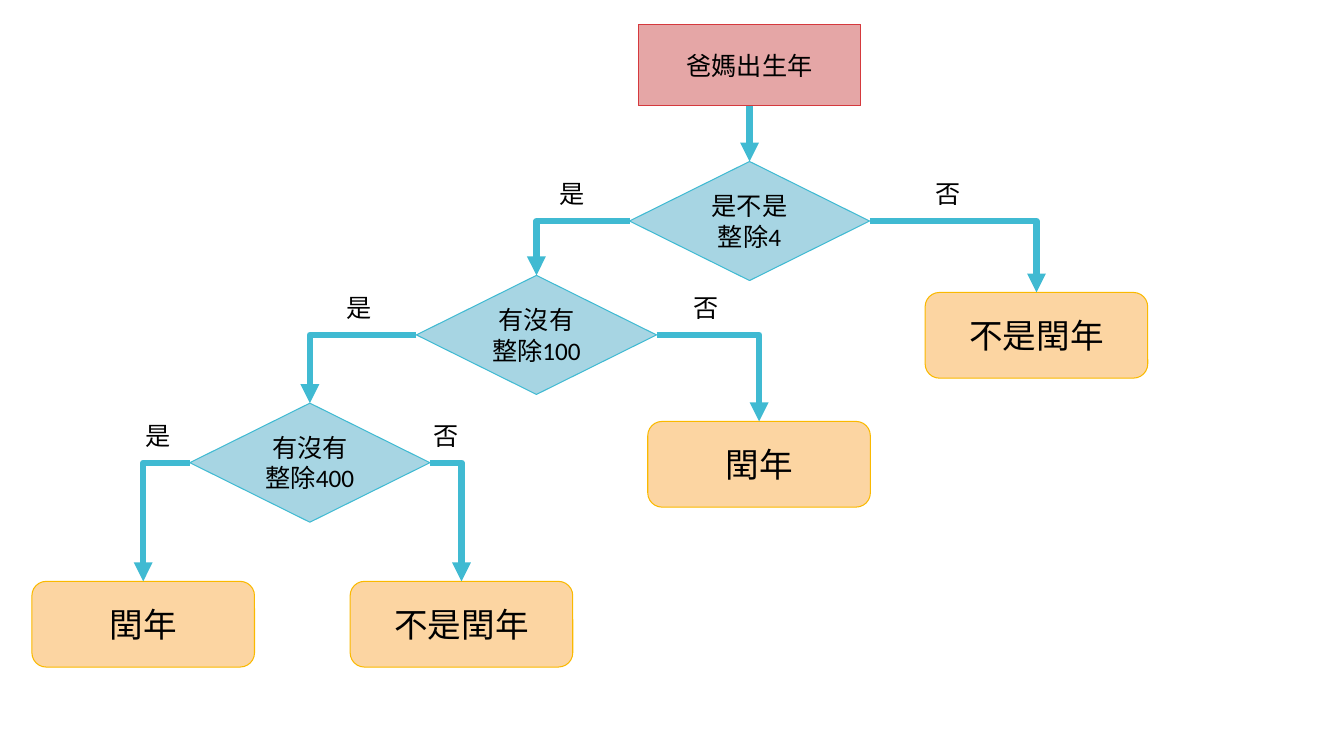
from lxml import etree
from pptx import Presentation
from pptx import util as u
from pptx.dml.color import RGBColor
from pptx.enum import shapes, text
from pptx.oxml.ns import qn

COLORS = {
    "text": "000000", "arrow": "40BAD2",
    "start": "E5A6A6", "start_edge": "D5393D",
    "test": "A7D5E3", "test_edge": "40BAD2",
    "result": "FCD5A2", "result_edge": "FAB900",
}
FONT = "Calibri"

# kind: preset shape, width and height in cm, text size in points
KINDS = {
    "start": (shapes.MSO_SHAPE.RECTANGLE, 5.61, 2.06, 18),
    "test": (shapes.MSO_SHAPE.DIAMOND, 6.05, 3.0, 18),
    "result": (shapes.MSO_SHAPE.ROUNDED_RECTANGLE, 5.61, 2.16, 24),
}

# key: kind, wording, centre x and top in cm
STEPS = {
    "birth year": ("start", "爸媽出生年", 18.89, 0.61),
    "by 4": ("test", "是不是整除4", 18.89, 4.07),
    "by 100": ("test", "有沒有整除100", 13.52, 6.94),
    "by 400": ("test", "有沒有整除400", 7.81, 10.16),
    "common, not by 4": ("result", "不是閏年", 26.12, 7.37),
    "leap, not by 100": ("result", "閏年", 19.13, 10.62),
    "leap, by 400": ("result", "閏年", 3.61, 14.65),
    "common, not by 400": ("result", "不是閏年", 11.63, 14.65),
}

# test: top of the two answers, then (answer, left of it, next step)
BRANCHES = {
    "by 4": (4.37, ("是", 13.84, "by 100"), ("否", 23.32, "common, not by 4")),
    "by 100": (7.24, ("是", 8.48, "by 400"), ("否", 17.22, "leap, not by 100")),
    "by 400": (10.46, ("是", 3.43, "leap, by 400"),
               ("否", 10.67, "common, not by 400")),
}
ANSWER_SIZE = (1.14, 1.02)
TOP, LEFT, BOTTOM, RIGHT = range(4)  # connection sites

prs = Presentation()
prs.slide_width, prs.slide_height = u.Cm(33.87), u.Cm(19.05)
slide = prs.slides.add_slide(prs.slide_layouts[6])


def rgb(name):
    return RGBColor.from_string(COLORS[name])


def write(frame, wording, size=18, align=text.PP_ALIGN.CENTER,
          anchor=text.MSO_ANCHOR.MIDDLE, wrap=True):
    frame.word_wrap = wrap
    frame.vertical_anchor = anchor
    paragraph = frame.paragraphs[0]
    paragraph.alignment = align
    run = paragraph.add_run()
    run.text = wording
    run.font.size = u.Pt(size)
    run.font.name = FONT
    run.font.color.rgb = rgb("text")


def add_step(kind, wording, centre, top):
    preset, width, height, size = KINDS[kind]
    step = slide.shapes.add_shape(preset, u.Cm(centre - width / 2), u.Cm(top),
                                  u.Cm(width), u.Cm(height))
    step.shadow.inherit = False
    step.fill.solid()
    step.fill.fore_color.rgb = rgb(kind)
    step.line.color.rgb = rgb(kind + "_edge")
    step.line.width = u.Pt(0.75)
    write(step.text_frame, wording, size=size)
    return step


def add_arrow(source, site, target, bent=True):
    route = shapes.MSO_CONNECTOR.ELBOW if bent else shapes.MSO_CONNECTOR.STRAIGHT
    arrow = slide.shapes.add_connector(route, 0, 0, 0, 0)
    arrow.begin_connect(source, site)
    arrow.end_connect(target, TOP)
    arrow.line.color.rgb = rgb("arrow")
    arrow.line.width = u.Pt(4.5)
    properties = arrow.element.spPr
    if bent:  # a single corner
        properties.find(qn("a:prstGeom")).set("prst", "bentConnector2")
    etree.SubElement(properties.find(qn("a:ln")), qn("a:tailEnd"), type="triangle")
    etree.SubElement(properties, qn("a:effectLst"))


# Steps
steps = {key: add_step(*step) for key, step in STEPS.items()}

# Arrows and answers
add_arrow(steps["birth year"], BOTTOM, steps["by 4"], bent=False)
for test, (top, *answers) in BRANCHES.items():
    for site, (answer, left, target) in zip((LEFT, RIGHT), answers):
        add_arrow(steps[test], site, steps[target])
        label = slide.shapes.add_textbox(u.Cm(left), u.Cm(top),
                                         *map(u.Cm, ANSWER_SIZE))
        write(label.text_frame, answer, align=text.PP_ALIGN.LEFT,
              anchor=text.MSO_ANCHOR.TOP, wrap=False)

prs.save("out.pptx")
